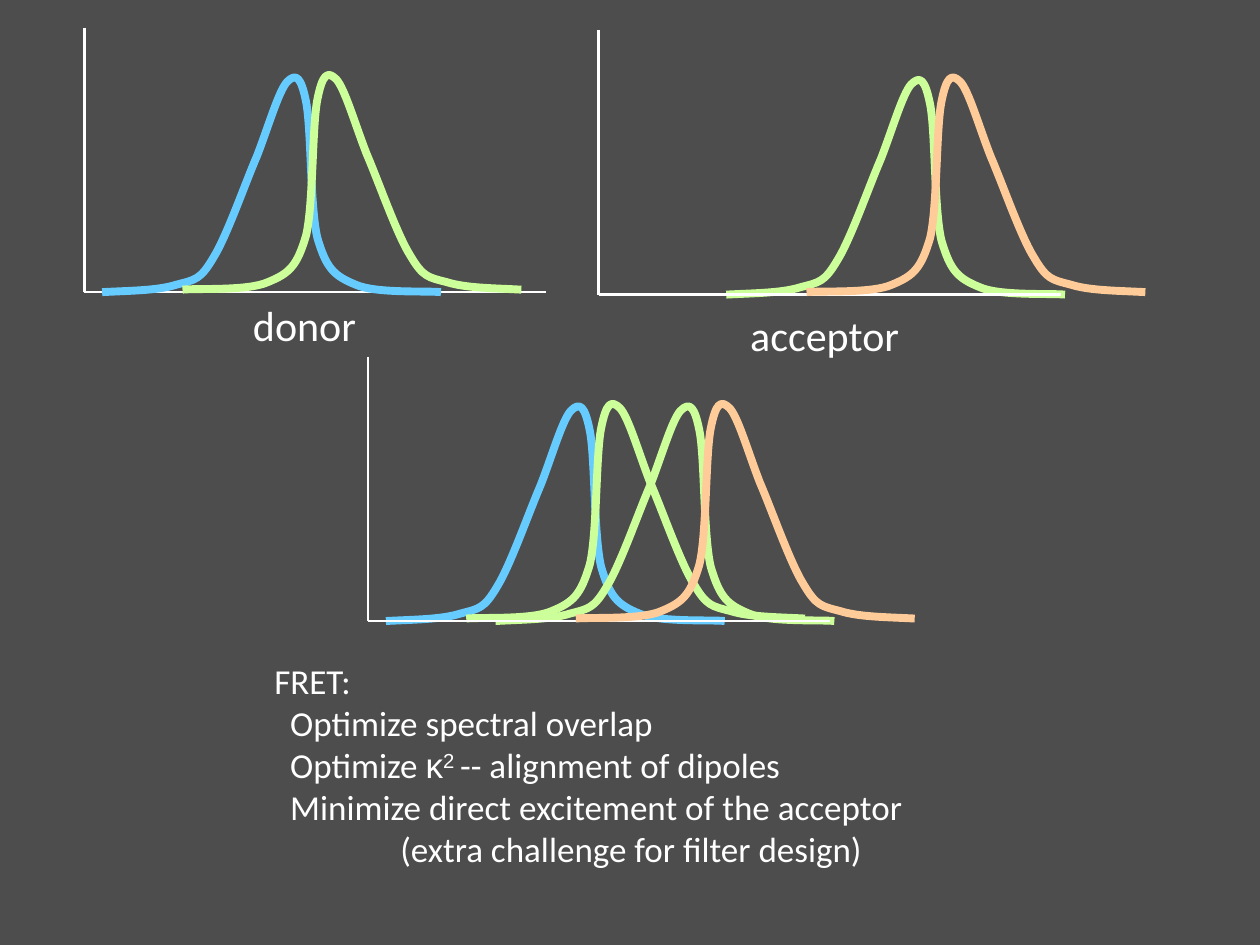
from dataclasses import dataclass

from lxml import etree
from pptx import Presentation
from pptx import util as u
from pptx.dml.color import RGBColor
from pptx.enum import shapes, text
from pptx.oxml import ns

BACKGROUND, WHITE = "4D4D4D", "FFFFFF"
BLUE, GREEN, ORANGE = "66CCFF", "CCFF99", "FFCC99"
AXIS_HEIGHT, AXIS_WIDTH = 5.33, 9.31
EMISSION_SHIFT, EMISSION_LIFT = 8.45, 0.05
SPECTRUM = [
    (0.56, -0.03), (1.12, -0.03), (1.5, -0.15),
    (1.88, -0.25), (1.98, -0.25), (2.24, -0.69),
    (2.51, -1.12), (2.87, -2.16), (3.12, -2.74),
    (3.35, -3.33), (3.56, -4.06), (3.73, -4.24),
    (3.91, -4.42), (4.01, -4.34), (4.11, -3.84),
    (4.22, -3.3), (4.19, -1.7), (4.34, -1.09),
    (4.52, -0.48), (4.67, -0.33), (5.11, -0.15),
    (5.51, 0.03), (6.55, -0.03), (6.83, 0),
]


@dataclass(frozen=True)
class Dye:
    offset: float
    absorption: str
    emission: str


@dataclass(frozen=True)
class Plot:
    left: float
    baseline: float
    dyes: tuple[Dye, ...]
    curves_behind_axes: int


@dataclass(frozen=True)
class Caption:
    wording: str
    left: float
    top: float
    width: float


@dataclass(frozen=True)
class Piece:
    wording: str
    font: str = "Calibri"
    raised: bool = False


@dataclass(frozen=True)
class Note:
    indent: float
    pieces: tuple[Piece, ...]


DONOR = Dye(0.36, BLUE, GREEN)
ACCEPTOR = Dye(2.57, GREEN, ORANGE)
PLOTS = [
    Plot(12.07, 5.94, (ACCEPTOR,), 1),
    Plot(7.42, 12.52, (DONOR, ACCEPTOR), 3),
    Plot(1.7, 5.89, (DONOR,), 0),
]
CAPTIONS = [
    Caption("donor", 4.83, 5.92, 2.62),
    Caption("acceptor", 14.86, 6.12, 3.53),
]
NOTES = [
    Note(0, (Piece("FRET:"),)),
    Note(0.32, (Piece("Optimize spectral overlap"),)),
    Note(0.32, (Piece("Optimize "), Piece("κ", "Arial"), Piece("2 ", "Arial", True),
                Piece("-- alignment of dipoles"))),
    Note(0.32, (Piece("Minimize direct excitement of the acceptor"),)),
    Note(2.54, (Piece("(extra challenge for filter design)"),)),
]


def paint(color_format, color: str) -> None:
    color_format.rgb = RGBColor.from_string(color)


def style_run(run, size: float, font: str) -> None:
    run.font.size = u.Pt(size)
    run.font.name = font
    paint(run.font.color, WHITE)


def draw_axis(group, x1: float, y1: float, x2: float, y2: float) -> None:
    axis = group.shapes.add_connector(
        shapes.MSO_CONNECTOR.STRAIGHT, u.Cm(x1), u.Cm(y1), u.Cm(x2), u.Cm(y2))
    axis.line.width = u.Pt(1.5)
    paint(axis.line.color, WHITE)
    etree.SubElement(axis._element.spPr, ns.qn("a:effectLst"))


def draw_axes(group, plot: Plot) -> None:
    draw_axis(group, plot.left, plot.baseline - AXIS_HEIGHT, plot.left, plot.baseline)
    draw_axis(group, plot.left, plot.baseline, plot.left + AXIS_WIDTH, plot.baseline)


def draw_spectrum(group, x: float, y: float, direction: int, color: str) -> None:
    builder = group.shapes.build_freeform(u.Cm(x), u.Cm(y))
    builder.add_line_segments(
        [(u.Cm(x + direction * dx), u.Cm(y + dy)) for dx, dy in SPECTRUM], close=False)
    curve = builder.convert_to_shape()
    contour = curve._element.xpath(".//a:path")[0]
    segments = contour.findall(ns.qn("a:lnTo"))
    for start in range(0, len(segments), 3):
        bezier = etree.SubElement(contour, ns.qn("a:cubicBezTo"))
        for segment in segments[start:start + 3]:
            bezier.append(segment[0])
            contour.remove(segment)
    curve.shadow.inherit = False
    curve.fill.background()
    curve.line.width = u.Pt(4.5)
    paint(curve.line.color, color)


def draw_plot(slide, plot: Plot) -> None:
    group = slide.shapes.add_group_shape()
    curves = []
    for dye in plot.dyes:
        x = plot.left + dye.offset
        curves.append((x, plot.baseline, 1, dye.absorption))
        curves.append((x + EMISSION_SHIFT, plot.baseline - EMISSION_LIFT, -1, dye.emission))
    for curve in curves[:plot.curves_behind_axes]:
        draw_spectrum(group, *curve)
    draw_axes(group, plot)
    for curve in curves[plot.curves_behind_axes:]:
        draw_spectrum(group, *curve)


def add_frame(slide, left: float, top: float, width: float, height: float):
    frame = slide.shapes.add_textbox(
        u.Cm(left), u.Cm(top), u.Cm(width), u.Cm(height)).text_frame
    frame.word_wrap = False
    frame.auto_size = text.MSO_AUTO_SIZE.SHAPE_TO_FIT_TEXT
    frame.vertical_anchor = text.MSO_ANCHOR.MIDDLE
    return frame


def write_notes(slide, notes: list[Note]) -> None:
    frame = add_frame(slide, 5.28, 13.16, 13.31, 4.52)
    for index, note in enumerate(notes):
        paragraph = frame.add_paragraph() if index else frame.paragraphs[0]
        paragraph._p.get_or_add_pPr().set("marL", str(u.Cm(note.indent)))
        for piece in note.pieces:
            run = paragraph.add_run()
            run.text = piece.wording
            style_run(run, 20, piece.font)
            if piece.raised:
                run._r.get_or_add_rPr().set("baseline", "30000")


def write_caption(slide, caption: Caption) -> None:
    frame = add_frame(slide, caption.left, caption.top, caption.width, 1.27)
    frame.text = caption.wording
    paragraph = frame.paragraphs[0]
    paragraph.alignment = text.PP_ALIGN.CENTER
    style_run(paragraph.runs[0], 24, "Calibri")


def main() -> None:
    presentation = Presentation()
    presentation.slide_width, presentation.slide_height = u.Cm(25.4), u.Cm(19.05)
    slide = presentation.slides.add_slide(presentation.slide_layouts[6])
    slide.background.fill.solid()
    paint(slide.background.fill.fore_color, BACKGROUND)
    for plot in PLOTS:
        draw_plot(slide, plot)
    write_notes(slide, NOTES)
    for caption in CAPTIONS:
        write_caption(slide, caption)
    presentation.save("out.pptx")


if __name__ == "__main__":
    main()
